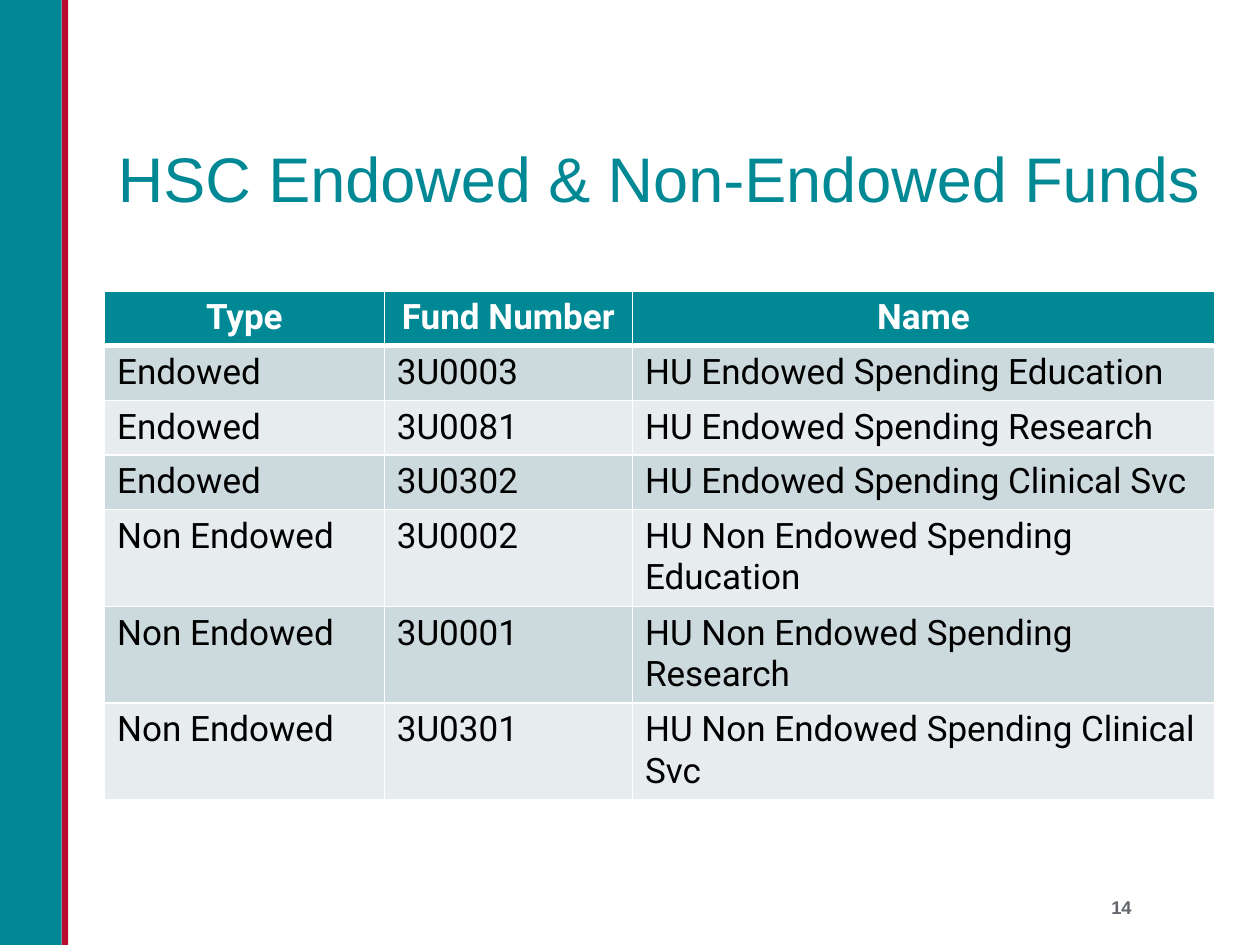
from lxml import etree
from pptx import Presentation
from pptx.dml.color import RGBColor
from pptx.enum.shapes import MSO_SHAPE
from pptx.enum.text import MSO_ANCHOR, PP_ALIGN
from pptx.oxml.ns import qn
from pptx.util import Inches, Pt

RECTANGLE = MSO_SHAPE.RECTANGLE
TOP, MIDDLE = MSO_ANCHOR.TOP, MSO_ANCHOR.MIDDLE
LEFT, CENTER, RIGHT = PP_ALIGN.LEFT, PP_ALIGN.CENTER, PP_ALIGN.RIGHT
TEAL, RED, WHITE, BLACK, GRAY = "008995", "BA0C2F", "FFFFFF", "000000", "63666A"
BANDS = ["E7EDEF", "CCDADD"]


def color(value):
    return RGBColor.from_string(value)


def write(frame, text, font, size, fill, align, bold=False):
    para = frame.paragraphs[0]
    para.alignment = align
    span = para.add_run()
    span.text = text
    span.font.name = font
    span.font.size = Pt(size)
    span.font.bold = bold
    span.font.color.rgb = color(fill)
    return para


deck = Presentation()
deck.slide_width, deck.slide_height = Inches(10), Inches(7.5)
page = deck.slides.add_slide(deck.slide_layouts[5])

for left, width, fill in [(0, 0.49, TEAL), (0.49, 0.05, RED)]:
    stripe = page.shapes.add_shape(RECTANGLE, Inches(left), 0, Inches(width), deck.slide_height)
    stripe.shadow.inherit = False
    stripe.fill.solid()
    stripe.fill.fore_color.rgb = color(fill)
    stripe.line.fill.background()

title = page.shapes.title
title.left, title.top = Inches(0.83), Inches(1.18)
title.width, title.height = Inches(8.8), Inches(0.54)
frame = title.text_frame
frame.margin_left = frame.margin_right = Inches(0.05)
frame.vertical_anchor = MIDDLE
para = write(frame, "HSC Endowed & Non-Endowed Funds", "Arial", 36, TEAL, CENTER)
para.line_spacing = 0.89

number = page.shapes.add_textbox(Inches(7.77), Inches(7.06), Inches(1.31), Inches(0.44))
number.text_frame.word_wrap = True
number.text_frame.vertical_anchor = TOP
write(number.text_frame, "14", "Arial", 10.5, GRAY, RIGHT, True)

funds = [
    ("Type", "Fund Number", "Name"),
    ("Endowed", "3U0003", "HU Endowed Spending Education"),
    ("Endowed", "3U0081", "HU Endowed Spending Research"),
    ("Endowed", "3U0302", "HU Endowed Spending Clinical Svc"),
    ("Non Endowed", "3U0002", "HU Non Endowed Spending Education"),
    ("Non Endowed", "3U0001", "HU Non Endowed Spending Research"),
    ("Non Endowed", "3U0301", "HU Non Endowed Spending Clinical Svc"),
]
row_height = 0.41
table = page.shapes.add_table(
    len(funds), 3, Inches(0.83), Inches(2.31), Inches(8.8), Inches(row_height * len(funds))
).table
for column, width in zip(table.columns, [2.22, 1.97, 4.62]):
    column.width = Inches(width)

for row, fund in enumerate(funds):
    header = row == 0
    for col, text in enumerate(fund):
        cell = table.cell(row, col)
        properties = cell._tc.get_or_add_tcPr()
        for side in ["L", "R", "T", "B"]:
            thick = (header and side == "B") or (row == 1 and side == "T")
            border = etree.SubElement(properties, qn(f"a:ln{side}"), w=str(Pt(3 if thick else 1)))
            paint = etree.SubElement(border, qn("a:solidFill"))
            etree.SubElement(paint, qn("a:srgbClr"), val=WHITE)
        cell.fill.solid()
        cell.fill.fore_color.rgb = color(TEAL if header else BANDS[row % 2])
        write(cell.text_frame, text, "Roboto", 20, WHITE if header else BLACK,
              CENTER if header else LEFT, header)

deck.save("out.pptx")
